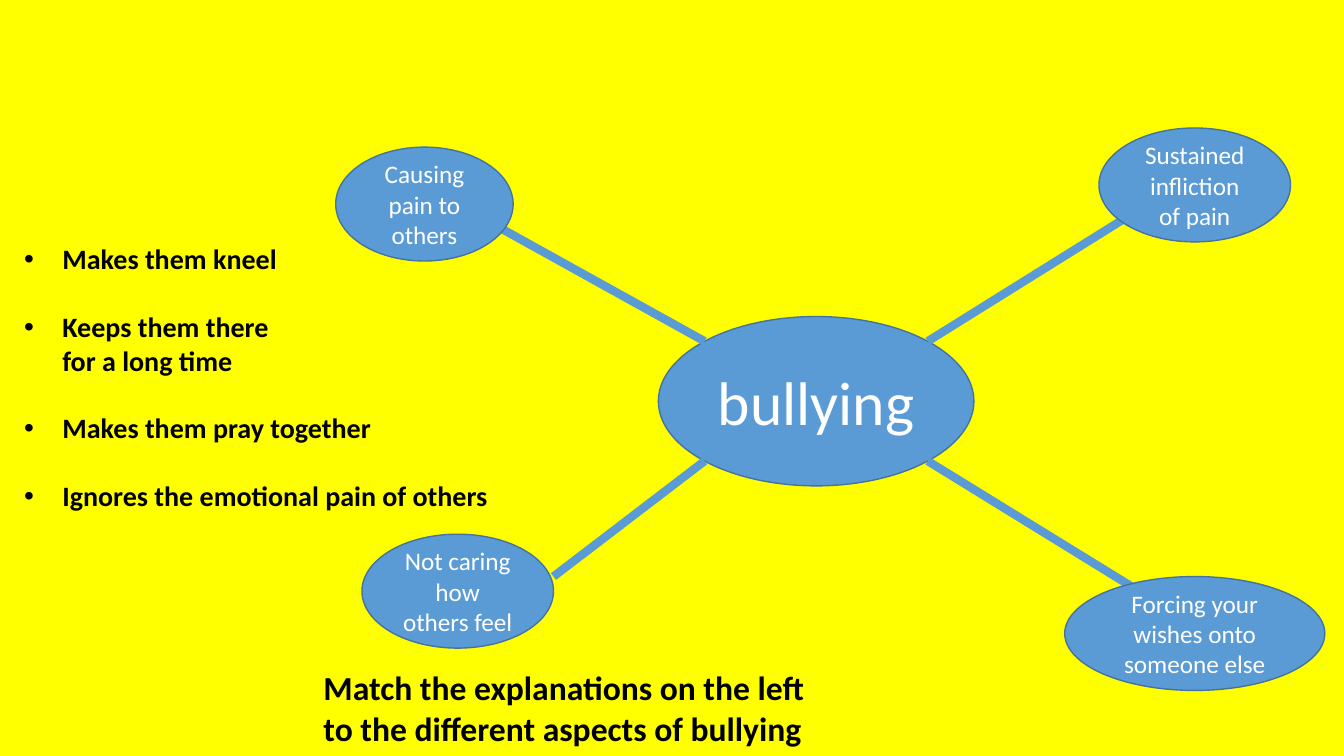
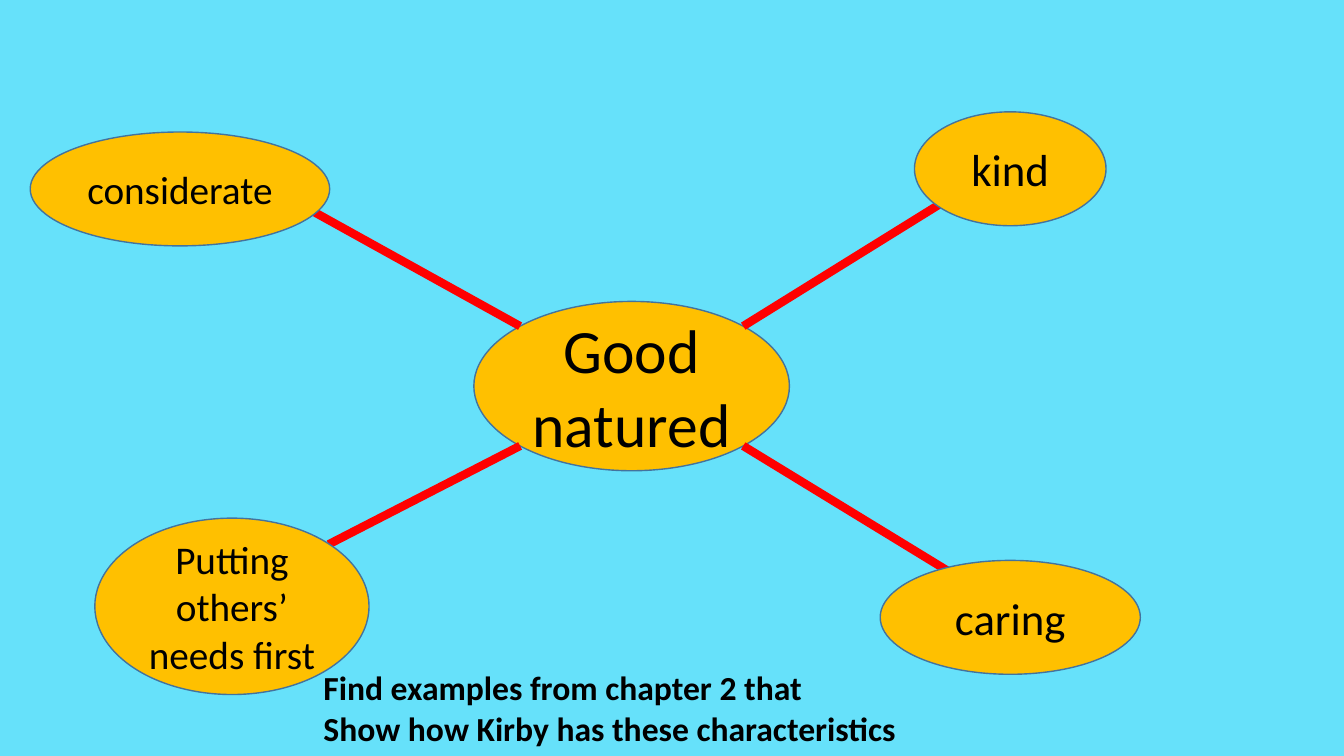
"""Build two mind-map slides, each with a central idea, four aspects and a task."""
from dataclasses import dataclass
from math import sqrt

from lxml.etree import SubElement
from pptx import Presentation
from pptx.dml.color import RGBColor
from pptx.enum.shapes import MSO_CONNECTOR, MSO_SHAPE
from pptx.enum.text import MSO_ANCHOR, PP_ALIGN
from pptx.oxml.ns import qn
from pptx.util import Inches, Pt


@dataclass(frozen=True)
class Theme:
    font: str = "Calibri"
    bullet_font: str = "Arial"
    outline: str = "43739E"
    ink: str = "000000"
    hub_size: int = 44
    task_size: int = 24
    list_size: int = 20
    list_gap: float = 24.4
    list_indent: float = 0.38
    outline_width: int = 1
    spoke_width: int = 6


THEME = Theme()
SLIDE_SIZE = (13.33, 7.5)
HUB_SIZE = (3.13, 1.68)
TASK_BOX = (3.11, 6.57, 6, 0.91)
LIST_BOX = (0.14, 2.35, 5, 3.4)

MIND_MAPS = [
    {
        "background": "FFFF00", "fill": "5B9BD5", "spoke": "5B9BD5", "text": "FFFFFF",
        "hub": ("bullying", (6.53, 3.14)),
        "aspects": [
            ("Causing pain to others", (3.33, 1.46, 1.76, 1.13), 18, (-1, -1), (4.94, 2.25)),
            ("Not caring how others feel", (3.59, 5.3, 1.9, 1.13), 18, (-1, 1), (5.49, 5.72)),
            ("Forcing your wishes onto someone else", (10.56, 5.72, 2.58, 1.13), 18, (1, 1), (11.29, 5.86)),
            ("Sustained infliction of pain", (10.9, 1.27, 1.9, 1.13), 18, (1, -1), (11.36, 2.04)),
        ],
        "task": ["Match the explanations on the left", "to the different aspects of bullying"],
        "explanations": [
            ["Makes them kneel"],
            ["Keeps them there", "for a long time"],
            ["Makes them pray together"],
            ["Ignores the emotional pain of others"],
        ],
    },
    {
        "background": "66E1FA", "fill": "FFC000", "spoke": "FF0000", "text": "000000",
        "hub": ("Good natured", (4.7, 2.99)),
        "aspects": [
            ("considerate", (0.3, 1.31, 2.97, 1.13), 28, (-1, -1), (3.11, 2.1)),
            ("Putting others’ needs first", (0.94, 5.14, 2.72, 1.75), 28, (-1, 1), (3.26, 5.4)),
            ("caring", (8.73, 5.56, 2.58, 1.13), 32, (1, 1), (9.46, 5.7)),
            ("kind", (9.07, 1.11, 1.9, 1.13), 32, (1, -1), (9.54, 1.89)),
        ],
        "task": ["Find examples from chapter 2 that", "Show how Kirby has these characteristics"],
        "explanations": [],
    },
]


def color(value):
    return RGBColor.from_string(value)


def inches(values):
    return [Inches(value) for value in values]


def add_run(paragraph, text, size, ink, bold=False):
    run = paragraph.add_run()
    run.text = text
    run.font.name = THEME.font
    run.font.size = Pt(size)
    run.font.bold = bold
    run.font.color.rgb = color(ink)


def add_ellipse(slide, box, text, size, mind_map):
    shape = slide.shapes.add_shape(MSO_SHAPE.OVAL, *inches(box))
    shape.shadow.inherit = False
    shape.fill.solid()
    shape.fill.fore_color.rgb = color(mind_map["fill"])
    shape.line.color.rgb = color(THEME.outline)
    shape.line.width = Pt(THEME.outline_width)
    frame = shape.text_frame
    frame.word_wrap = True
    frame.vertical_anchor = MSO_ANCHOR.MIDDLE
    paragraph = frame.paragraphs[0]
    paragraph.alignment = PP_ALIGN.CENTER
    add_run(paragraph, text, size, mind_map["text"])


def add_spoke(slide, start, end, line_color):
    spoke = slide.shapes.add_connector(MSO_CONNECTOR.STRAIGHT, *inches(start + end))
    spoke.line.color.rgb = color(line_color)
    spoke.line.width = Pt(THEME.spoke_width)
    SubElement(spoke.element.spPr, qn("a:effectLst"))


def hub_edge(box, direction):
    left, top, width, height = box
    horizontal, vertical = direction
    return (left + width / 2 * (1 + horizontal / sqrt(2)),
            top + height / 2 * (1 + vertical / sqrt(2)))


def add_bullet(paragraph):
    properties = paragraph._p.get_or_add_pPr()
    properties.set("marL", str(Inches(THEME.list_indent)))
    properties.set("indent", str(-Inches(THEME.list_indent)))
    SubElement(properties, qn("a:buFont"), typeface=THEME.bullet_font)
    SubElement(properties, qn("a:buChar"), char="•")


def add_text(slide, box, paragraphs, size, bulleted=False):
    frame = slide.shapes.add_textbox(*inches(box)).text_frame
    frame.word_wrap = True
    for index, lines in enumerate(paragraphs):
        paragraph = frame.add_paragraph() if index else frame.paragraphs[0]
        if bulleted:
            paragraph.space_before = Pt(THEME.list_gap if index else 0)
            add_bullet(paragraph)
        for number, line in enumerate(lines):
            if number:
                paragraph.add_line_break()
            add_run(paragraph, line, size, THEME.ink, bold=True)


def add_mind_map(presentation, mind_map):
    slide = presentation.slides.add_slide(presentation.slide_layouts[6])
    slide.background.fill.solid()
    slide.background.fill.fore_color.rgb = color(mind_map["background"])
    hub_text, hub_corner = mind_map["hub"]
    hub_box = hub_corner + HUB_SIZE
    add_ellipse(slide, hub_box, hub_text, THEME.hub_size, mind_map)
    for *_, direction, end in mind_map["aspects"]:
        add_spoke(slide, hub_edge(hub_box, direction), end, mind_map["spoke"])
    for text, box, size, *_ in mind_map["aspects"]:
        add_ellipse(slide, box, text, size, mind_map)
    add_text(slide, TASK_BOX, [[line] for line in mind_map["task"]], THEME.task_size)
    if mind_map["explanations"]:
        add_text(slide, LIST_BOX, mind_map["explanations"], THEME.list_size, bulleted=True)


def main():
    presentation = Presentation()
    presentation.slide_width, presentation.slide_height = inches(SLIDE_SIZE)
    for mind_map in MIND_MAPS:
        add_mind_map(presentation, mind_map)
    presentation.save("out.pptx")


if __name__ == "__main__":
    main()
